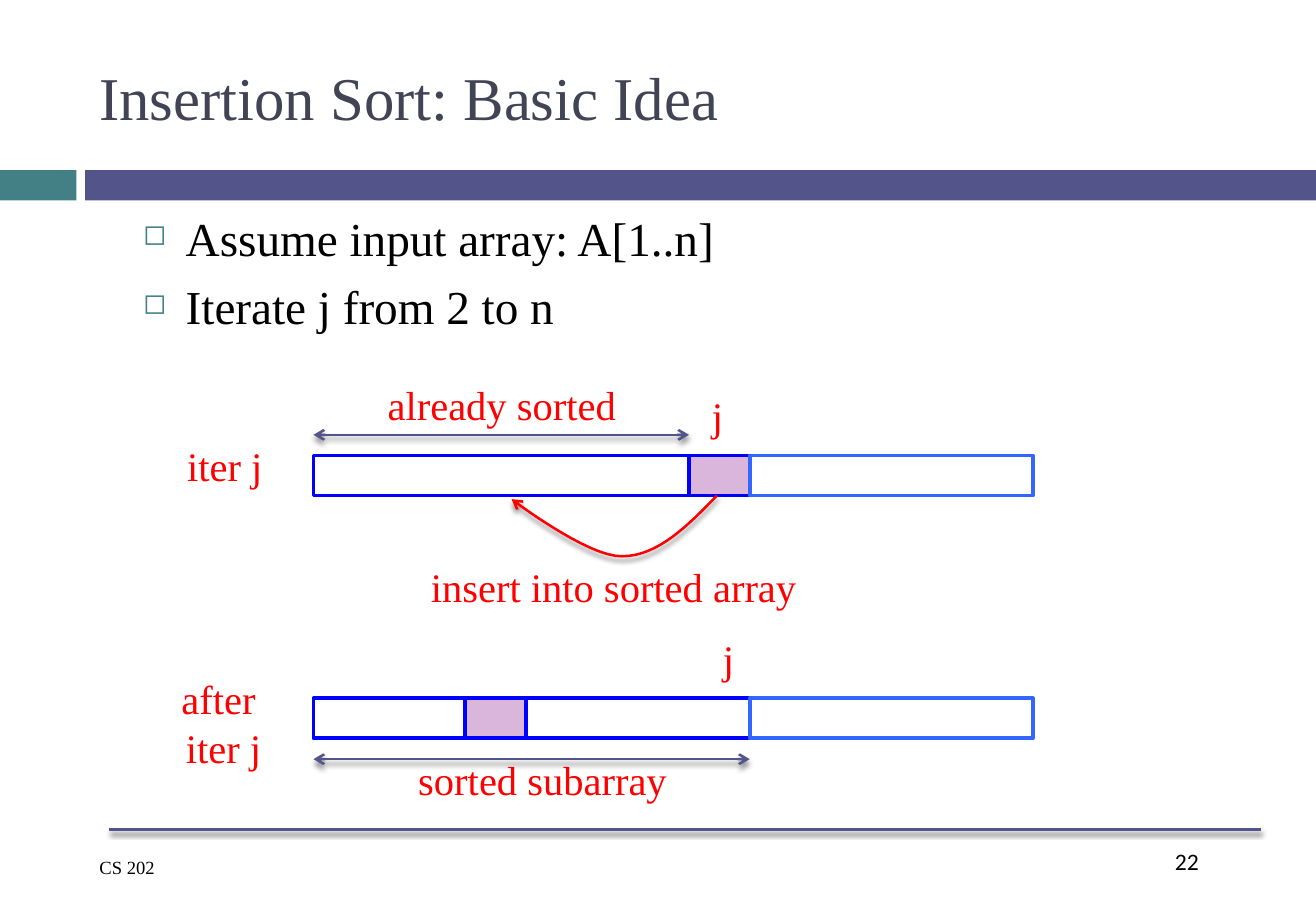
"""Builds the slide that explains the basic idea of insertion sort."""
from dataclasses import dataclass

import pptx
import pptx.dml.color
import pptx.enum.shapes
import pptx.enum.text
import pptx.oxml
import pptx.oxml.ns
import pptx.util
from pptx.util import Inches

ALIGN = pptx.enum.text.PP_ALIGN
ANCHOR = pptx.enum.text.MSO_ANCHOR


@dataclass(frozen=True)
class Theme:
    serif: str = "Times New Roman"
    sans: str = "Calibri"
    title: str = "424456"
    text: str = "000000"
    label: str = "FF0000"
    accent: str = "53548A"
    teal: str = "438086"
    white: str = "FFFFFF"
    key: str = "DBB6DC"
    sorted_line: str = "0000FF"
    rest_line: str = "3366FF"
    title_size: int = 36
    body_size: int = 28
    label_size: int = 24
    number_size: int = 14
    footer_size: int = 11
    bar_width: float = 2.29
    line_width: float = 1.5


THEME = Theme()
ARRAY_LEFT, KEY_LEFT, REST_LEFT, ARRAY_RIGHT = 2.58, 5.67, 6.17, 8.5
INSERTED_LEFT, KEY_WIDTH, BAR_HEIGHT = 3.83, 0.5, 0.33
BEFORE_TOP, AFTER_TOP = 3.75, 5.75


def rgb(color):
    return pptx.dml.color.RGBColor.from_string(color)


def append_xml(parent, tag, content="", attrs=""):
    ns = pptx.oxml.ns.nsdecls("a")
    parent.append(pptx.oxml.parse_xml(f"<a:{tag} {ns} {attrs}>{content}</a:{tag}>"))


def add_text(slide, box, lines, size, color, font=THEME.serif,
             align=ALIGN.LEFT, anchor=ANCHOR.TOP, wrap=True):
    tf = slide.shapes.add_textbox(*map(Inches, box)).text_frame
    tf.word_wrap = wrap
    tf.vertical_anchor = anchor
    for i, line in enumerate(lines):
        p = tf.add_paragraph() if i else tf.paragraphs[0]
        p.alignment = align
        r = p.add_run()
        r.text = line
        r.font.name = font
        r.font.size = pptx.util.Pt(size)
        r.font.color.rgb = rgb(color)
    return tf


def add_label(slide, left, top, width, *lines, height=0.5):
    add_text(slide, (left, top, width, height), lines, THEME.label_size,
             THEME.label, align=ALIGN.CENTER, wrap=False)


def add_bullets(slide, box, lines):
    tf = add_text(slide, box, lines, THEME.body_size, THEME.text)
    for p in tf.paragraphs:
        p.space_before = pptx.util.Pt(7)
        pPr = p._p.get_or_add_pPr()
        pPr.set("marL", str(Inches(0.35)))
        pPr.set("indent", str(-Inches(0.35)))
        append_xml(pPr, "buClr", f'<a:srgbClr val="{THEME.teal}"/>')
        append_xml(pPr, "buSzPct", attrs='val="60000"')
        append_xml(pPr, "buChar", attrs='char="◻"')


def add_rect(slide, left, top, width, height, fill, line=None):
    kind = pptx.enum.shapes.MSO_SHAPE.RECTANGLE
    sp = slide.shapes.add_shape(kind, *map(Inches, (left, top, width, height)))
    sp.shadow.inherit = False
    sp.fill.solid()
    sp.fill.fore_color.rgb = rgb(fill)
    if line:
        sp.line.color.rgb = rgb(line)
        sp.line.width = pptx.util.Pt(THEME.bar_width)
    else:
        sp.line.fill.background()


def add_bar(slide, left, right, top, fill=THEME.white, line=THEME.sorted_line):
    add_rect(slide, left, top, right - left, BAR_HEIGHT, fill, line)


def style_line(sp, color, ends=()):
    sp.line.color.rgb = rgb(color)
    sp.line.width = pptx.util.Pt(THEME.line_width)
    for end in ends:
        append_xml(sp.line._get_or_add_ln(), end, attrs='type="arrow"')
    shadow = ('<a:outerShdw blurRad="38100" dist="30480" dir="5400000" rotWithShape="0">'
              '<a:srgbClr val="000000"><a:alpha val="45000"/></a:srgbClr></a:outerShdw>')
    append_xml(sp._element.spPr, "effectLst", shadow)


def add_line(slide, left, right, y, ends=()):
    kind = pptx.enum.shapes.MSO_CONNECTOR.STRAIGHT
    line = slide.shapes.add_connector(kind, *map(Inches, (left, y, right, y)))
    style_line(line, THEME.accent, ends)


def bezier(points, steps=16):
    """Returns points along a cubic curve, without its start."""
    curve = []
    for i in range(1, steps + 1):
        t = i / steps
        weights = ((1 - t) ** 3, 3 * t * (1 - t) ** 2, 3 * t * t * (1 - t), t ** 3)
        curve.append(tuple(Inches(sum(w * pt[axis] for w, pt in zip(weights, points)))
                           for axis in (0, 1)))
    return curve


def add_curved_arrow(slide, points):
    builder = slide.shapes.build_freeform(*map(Inches, points[0]))
    for start in range(0, len(points) - 1, 3):
        builder.add_line_segments(bezier(points[start:start + 4]), close=False)
    sp = builder.convert_to_shape()
    sp.fill.background()
    style_line(sp, THEME.label, ("tailEnd",))


def add_frame(slide):
    add_rect(slide, 0, 1.4, 0.63, 0.25, THEME.teal)
    add_rect(slide, 0.7, 1.4, 10.13, 0.25, THEME.accent)
    add_text(slide, (9.57, 6.92, 0.81, 0.5), ["22"], THEME.number_size,
             THEME.text, THEME.sans)
    add_line(slide, 0.9, 10.38, 6.83)
    add_text(slide, (0.72, 7, 1.99, 0.29), ["CS 202"], THEME.footer_size, THEME.text)
    add_text(slide, (0.72, 0.25, 9.66, 1.08), ["Insertion Sort: Basic Idea"],
             THEME.title_size, THEME.title, anchor=ANCHOR.MIDDLE)


def add_before(slide):
    add_bar(slide, ARRAY_LEFT, KEY_LEFT, BEFORE_TOP)
    add_bar(slide, KEY_LEFT, REST_LEFT, BEFORE_TOP, THEME.key)
    add_bar(slide, REST_LEFT, ARRAY_RIGHT, BEFORE_TOP, line=THEME.rest_line)
    add_label(slide, 1.42, 3.58, 0.86, "iter j")
    add_label(slide, 5.76, 3.17, 0.29, "j")
    add_label(slide, 3.08, 3.08, 2.1, "already sorted")
    add_line(slide, ARRAY_LEFT, KEY_LEFT, 3.58, ("headEnd", "tailEnd"))


def add_after(slide):
    add_bar(slide, ARRAY_LEFT, REST_LEFT, AFTER_TOP)
    add_bar(slide, INSERTED_LEFT, INSERTED_LEFT + KEY_WIDTH, AFTER_TOP, THEME.key)
    add_bar(slide, REST_LEFT, ARRAY_RIGHT, AFTER_TOP, line=THEME.rest_line)
    add_label(slide, 1.39, 5.5, 0.9, "after ", "iter j", height=0.91)
    add_label(slide, 5.85, 5.17, 0.29, "j")
    add_label(slide, 3.33, 6.17, 2.27, "sorted subarray")
    add_line(slide, ARRAY_LEFT, REST_LEFT, 6.25, ("headEnd", "tailEnd"))


def main():
    prs = pptx.Presentation()
    prs.slide_width, prs.slide_height = Inches(10.83), Inches(7.5)
    slide = prs.slides.add_slide(prs.slide_layouts[6])
    add_frame(slide)
    add_bullets(slide, (1.08, 1.67, 8.92, 1.25),
                ["Assume input array: A[1..n]", "Iterate j from 2 to n"])
    add_before(slide)
    add_curved_arrow(slide, [(5.9, 4.08), (5.66, 4.33), (5.41, 4.58), (5.12, 4.58),
                             (4.84, 4.59), (4.21, 4.11), (4.21, 4.11)])
    add_label(slide, 3.42, 4.58, 3.26, "insert into sorted array")
    add_after(slide)
    prs.save("out.pptx")


if __name__ == "__main__":
    main()
